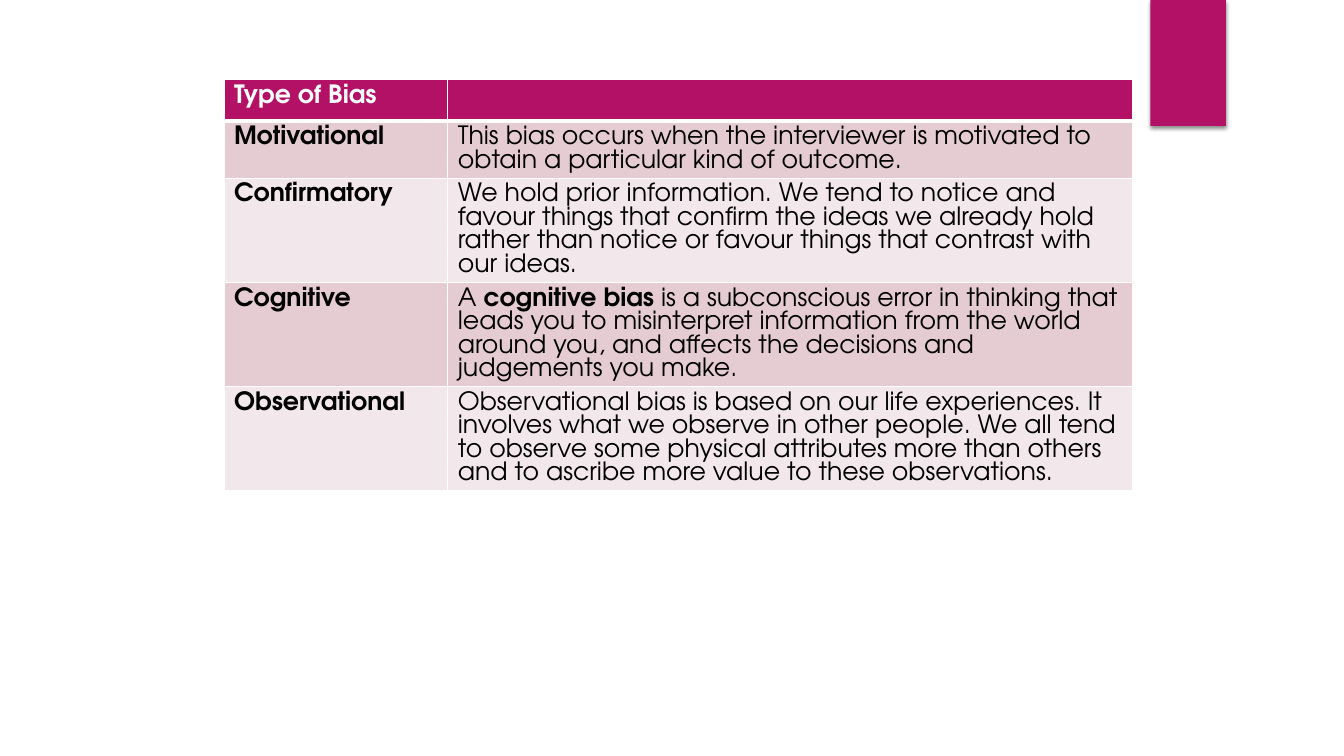
from dataclasses import dataclass

from lxml import etree
from pptx import Presentation
from pptx.dml.color import RGBColor
from pptx.enum.shapes import MSO_SHAPE
from pptx.oxml.ns import qn
from pptx.slide import Slide
from pptx.table import _Cell
from pptx.util import Inches, Pt

RECTANGLE = MSO_SHAPE.RECTANGLE
MAGENTA = RGBColor(0xB3, 0x11, 0x66)
ROSE = RGBColor(0xE5, 0xCC, 0xD3)
PALE_ROSE = RGBColor(0xF2, 0xE7, 0xEA)
WHITE = RGBColor(0xFF, 0xFF, 0xFF)
BLACK = RGBColor(0x00, 0x00, 0x00)
FONT = "TeX Gyre Adventor"
FONT_SIZE = Pt(18)
PAGE_WIDTH, PAGE_HEIGHT = Inches(13.33), Inches(7.5)
BLANK_LAYOUT = 6
COLUMN_WIDTHS = (Inches(2.22), Inches(6.79))
HEADER_HEIGHT = Inches(0.41)


@dataclass(frozen=True)
class Span:
    text: str
    bold: bool = False


@dataclass(frozen=True)
class BiasRow:
    name: str
    description: tuple[Span, ...]
    height: float


ROWS = (
    BiasRow("Type of Bias", (), 0.41),
    BiasRow("Motivational", (
        Span("This bias occurs when the interviewer is motivated to obtain "
             "a particular kind of outcome."),), 0.53),
    BiasRow("Confirmatory", (
        Span("We hold prior information. We tend to notice and favour things that "
             "confirm the ideas we already hold rather than notice or favour things "
             "that contrast with our ideas."),), 0.41),
    BiasRow("Cognitive", (
        Span("A "),
        Span("cognitive bias", bold=True),
        Span(" is a subconscious error in thinking that leads you to misinterpret "
             "information from the world around you, and affects the decisions and "
             "judgements you make.")), 0.41),
    BiasRow("Observational", (
        Span("Observational bias is based on our life experiences. It involves what we "
             "observe in other people. We all tend to observe some physical attributes "
             "more than others and to ascribe more value to these observations."),), 0.41),
)


def set_borders(cell: _Cell, bottom_points: float, top_points: float) -> None:
    """Draw white borders; they must precede the fill in the cell properties."""
    properties = cell._tc.get_or_add_tcPr()
    widths = {"a:lnL": 1, "a:lnR": 1, "a:lnT": top_points, "a:lnB": bottom_points}
    for tag, points in widths.items():
        line = etree.SubElement(properties, qn(tag), w=str(Pt(points)))
        fill = etree.SubElement(line, qn("a:solidFill"))
        etree.SubElement(fill, qn("a:srgbClr"), val=str(WHITE))


def fill_cell(cell: _Cell, spans: tuple[Span, ...], ink: RGBColor, paint: RGBColor) -> None:
    cell.fill.solid()
    cell.fill.fore_color.rgb = paint
    para = cell.text_frame.paragraphs[0]
    para.font.size = FONT_SIZE
    for span in spans:
        run = para.add_run()
        run.text = span.text
        run.font.name = FONT
        run.font.size = FONT_SIZE
        run.font.bold = span.bold
        run.font.color.rgb = ink


def add_bias_table(page: Slide) -> None:
    heights = [Inches(row.height) for row in ROWS]
    table = page.shapes.add_table(
        len(ROWS), len(COLUMN_WIDTHS), int(PAGE_WIDTH / 6), Inches(0.79),
        sum(COLUMN_WIDTHS), sum(heights)).table
    for column, width in zip(table.columns, COLUMN_WIDTHS):
        column.width = width
    for index, row in enumerate(ROWS):
        table.rows[index].height = heights[index]
        is_header = index == 0
        ink = WHITE if is_header else BLACK
        paint = MAGENTA if is_header else (ROSE if index % 2 else PALE_ROSE)
        contents = ((Span(row.name, bold=True),), row.description)
        for column_index, spans in enumerate(contents):
            cell = table.cell(index, column_index)
            set_borders(cell, 3 if is_header else 1, 3 if index == 1 else 1)
            fill_cell(cell, spans, ink, paint)


def add_corner_tab(page: Slide) -> None:
    tab = page.shapes.add_shape(
        RECTANGLE, Inches(11.41), 0, Inches(0.75), int(PAGE_HEIGHT / 6))
    tab.shadow.inherit = False
    tab.fill.solid()
    tab.fill.fore_color.rgb = MAGENTA
    tab.line.fill.background()
    effects = tab._element.spPr.find(qn("a:effectLst"))
    shadow = etree.SubElement(
        effects, qn("a:outerShdw"), blurRad=str(Pt(3)), dist=str(Pt(2)),
        dir=str(90 * 60000), rotWithShape="0")
    color = etree.SubElement(shadow, qn("a:srgbClr"), val=str(BLACK))
    etree.SubElement(color, qn("a:alpha"), val="45000")


def main() -> None:
    deck = Presentation()
    deck.slide_width, deck.slide_height = PAGE_WIDTH, PAGE_HEIGHT
    page = deck.slides.add_slide(deck.slide_layouts[BLANK_LAYOUT])
    add_corner_tab(page)
    add_bias_table(page)
    deck.save("out.pptx")


if __name__ == "__main__":
    main()
